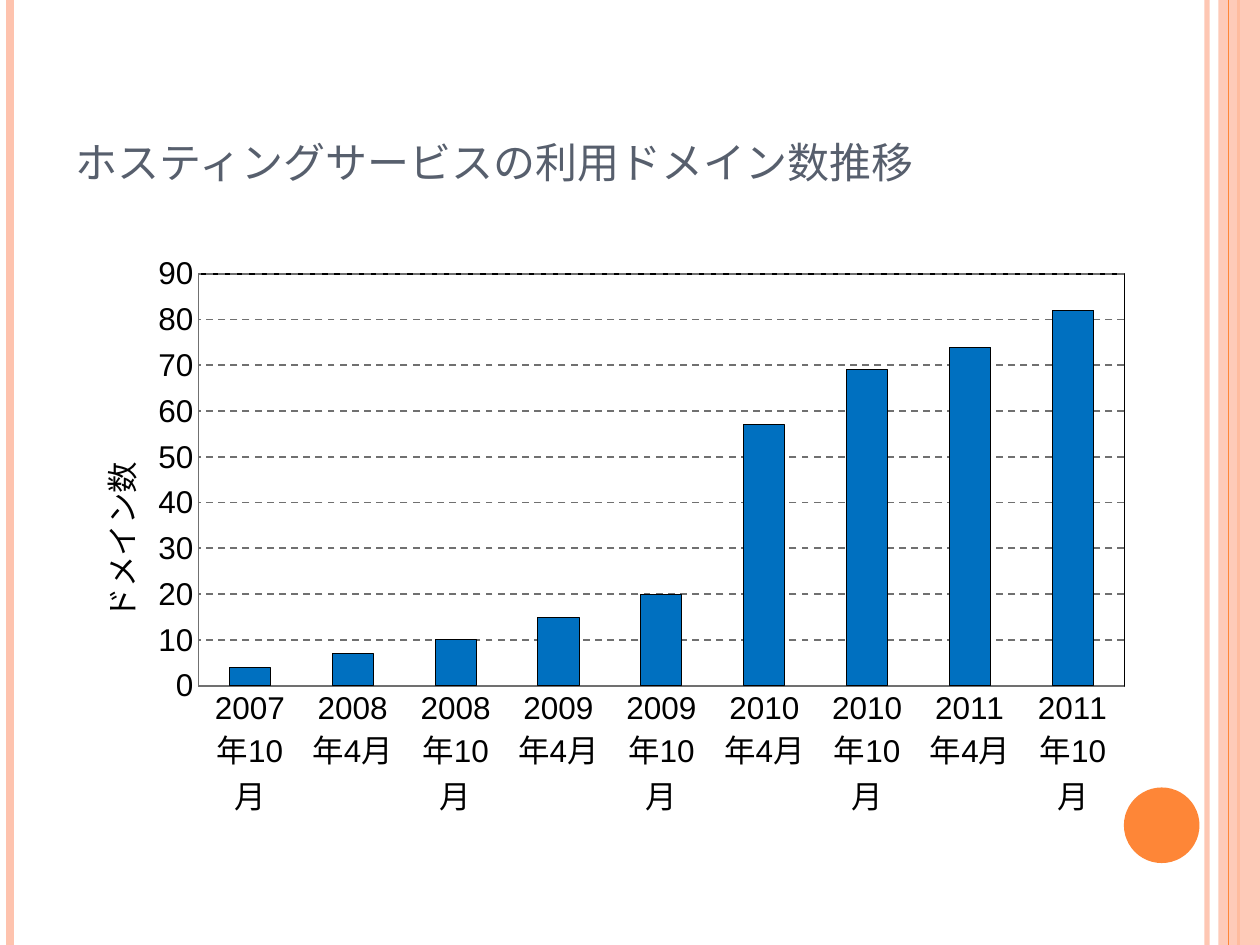
"""Build a slide with a column chart of hosted domain counts over time."""
from lxml import etree
from pptx import Presentation
from pptx import util as u
from pptx.chart import data
from pptx.dml.color import RGBColor
from pptx.enum import chart as ch, dml, shapes, text
from pptx.oxml import parse_xml
from pptx.oxml.ns import nsdecls, qn

TITLE = "ホスティングサービスの利用ドメイン数推移"
AXIS = "ドメイン数"
POINTS = [
    ("2007年10月", 4), ("2008年4月", 7), ("2008年10月", 10),
    ("2009年4月", 15), ("2009年10月", 20), ("2010年4月", 57),
    ("2010年10月", 69), ("2011年4月", 74), ("2011年10月", 82),
]
FONT = "Arial"
PEACH = RGBColor(0xFE, 0xC3, 0xAE)
ORANGE = RGBColor(0xFE, 0x86, 0x37)
SLATE = RGBColor(0x57, 0x5F, 0x6D)
BLUE = RGBColor(0x00, 0x70, 0xC0)
BLACK = RGBColor(0, 0, 0)
GRAY = RGBColor(0x70, 0x70, 0x70)
WHITE = RGBColor(0xFF, 0xFF, 0xFF)
RULES = [(9.58, PEACH, 3, 93), (0.08, PEACH, 4.5, 100), (9.83, ORANGE, 1.5, 100)]
EDGE = (9.75, ORANGE, 0.75, 100)
BAND = ("RECTANGLE", (9.67, 0, 0.33, 7.5), PEACH, 87)
DOT = ("OVAL", (8.92, 6.25, 0.6, 0.6), ORANGE, 100)


def fade(part, alpha):
    if alpha < 100:
        tint = next(part._element.spPr.iter(qn("a:srgbClr")))
        etree.SubElement(tint, qn("a:alpha")).set("val", str(alpha * 1000))


def add_rule(slide, left, color, width, alpha):
    rule = slide.shapes.add_connector(
        shapes.MSO_CONNECTOR.STRAIGHT, u.Inches(left), 0, u.Inches(left), u.Inches(7.5))
    rule.line.color.rgb = color
    rule.line.width = u.Pt(width)
    fade(rule, alpha)
    etree.SubElement(rule._element.spPr, qn("a:effectLst"))


def add_block(slide, kind, box, color, alpha):
    block = slide.shapes.add_shape(
        getattr(shapes.MSO_SHAPE, kind), *map(u.Inches, box))
    block.shadow.inherit = False
    block.fill.solid()
    block.fill.fore_color.rgb = color
    block.line.fill.background()
    fade(block, alpha)


def put_text(frame, words, size, color, bold=False, caps=False):
    para = frame.paragraphs[0]
    run = para.add_run()
    run.text = words
    font = run.font
    font.name, font.size, font.bold = FONT, u.Pt(size), bold
    font.color.rgb = color
    if caps:
        run._r.get_or_add_rPr().set("cap", "small")
    return para


def make_layout(inner=False, **spots):
    modes = "".join(f'<c:{k}Mode val="edge"/>' for k in "xy")
    sides = "".join(f'<c:{k} val="{v}"/>' for k, v in spots.items())
    target = '<c:layoutTarget val="inner"/>' if inner else ""
    return parse_xml(f'<c:layout {nsdecls("c")}><c:manualLayout>{target}{modes}{sides}'
                     '</c:manualLayout></c:layout>')


def style_axis(axis):
    axis.major_tick_mark = axis.minor_tick_mark = ch.XL_TICK_MARK.NONE
    font = axis.tick_labels.font
    font.name, font.size = FONT, u.Pt(18)
    font.color.rgb = BLACK
    axis.format.line.color.rgb = GRAY
    axis.format.line.width = u.Pt(1)


def style_plot(chart):
    area = chart._chartSpace.chart.plotArea
    for old in area.findall(qn("c:layout")):
        area.remove(old)
    area.insert(0, make_layout(True, x=0.14, y=0.05, w=0.84, h=0.7))
    area.append(parse_xml(
        f'<c:spPr {nsdecls("c", "a")}><a:solidFill><a:srgbClr val="{WHITE}"/></a:solidFill>'
        f'<a:ln w="12700"><a:solidFill><a:srgbClr val="{BLACK}"/></a:solidFill></a:ln></c:spPr>'))


def add_graph(slide):
    table = data.CategoryChartData()
    table.categories = [name for name, _ in POINTS]
    table.add_series("Series 1", [count for _, count in POINTS])
    chart = slide.shapes.add_chart(
        ch.XL_CHART_TYPE.COLUMN_CLUSTERED, *map(u.Inches, (0.35, 1.94, 8.75, 4.67)), table).chart
    chart.has_legend = chart.has_title = False
    chart.font.name, chart.font.size = FONT, u.Pt(10)
    chart.font.color.rgb = BLACK
    plot = chart.plots[0]
    plot.gap_width, plot.vary_by_categories = 150, False
    bars = plot.series[0].format
    bars.fill.solid()
    bars.fill.fore_color.rgb = BLUE
    bars.line.color.rgb = BLACK
    bars.line.width = u.Pt(0.5)
    for axis in (chart.category_axis, chart.value_axis):
        style_axis(axis)
    scale = chart.value_axis
    scale.minimum_scale, scale.maximum_scale, scale.major_unit = 0, 90, 10
    grid = scale.major_gridlines.format.line
    grid.color.rgb, grid.width = GRAY, u.Pt(1)
    grid.dash_style = dml.MSO_LINE.DASH
    label = scale.axis_title
    put_text(label.text_frame, AXIS, 18, BLACK)
    body = label._element.find(qn("c:tx")).find(qn("c:rich")).find(qn("a:bodyPr"))
    body.set("rot", "-5400000")
    body.set("vert", "horz")
    for old in label._element.findall(qn("c:layout")):
        label._element.remove(old)
    label._element.find(qn("c:tx")).addnext(make_layout(x=0.04, y=0.36))
    style_plot(chart)


def main():
    deck = Presentation()
    deck.slide_width, deck.slide_height = u.Inches(10), u.Inches(7.5)
    slide = deck.slides.add_slide(deck.slide_layouts[5])
    for rule in RULES:
        add_rule(slide, *rule)
    add_block(slide, *BAND)
    add_rule(slide, *EDGE)
    add_block(slide, *DOT)
    title = slide.shapes.title
    title.left, title.top, title.width, title.height = map(u.Inches, (0.5, 0.3, 8.17, 1.25))
    title.text_frame.vertical_anchor = text.MSO_ANCHOR.BOTTOM
    para = put_text(title.text_frame, TITLE, 30, SLATE, caps=True)
    para.alignment = text.PP_ALIGN.LEFT
    add_graph(slide)
    deck.save("out.pptx")


if __name__ == "__main__":
    main()
